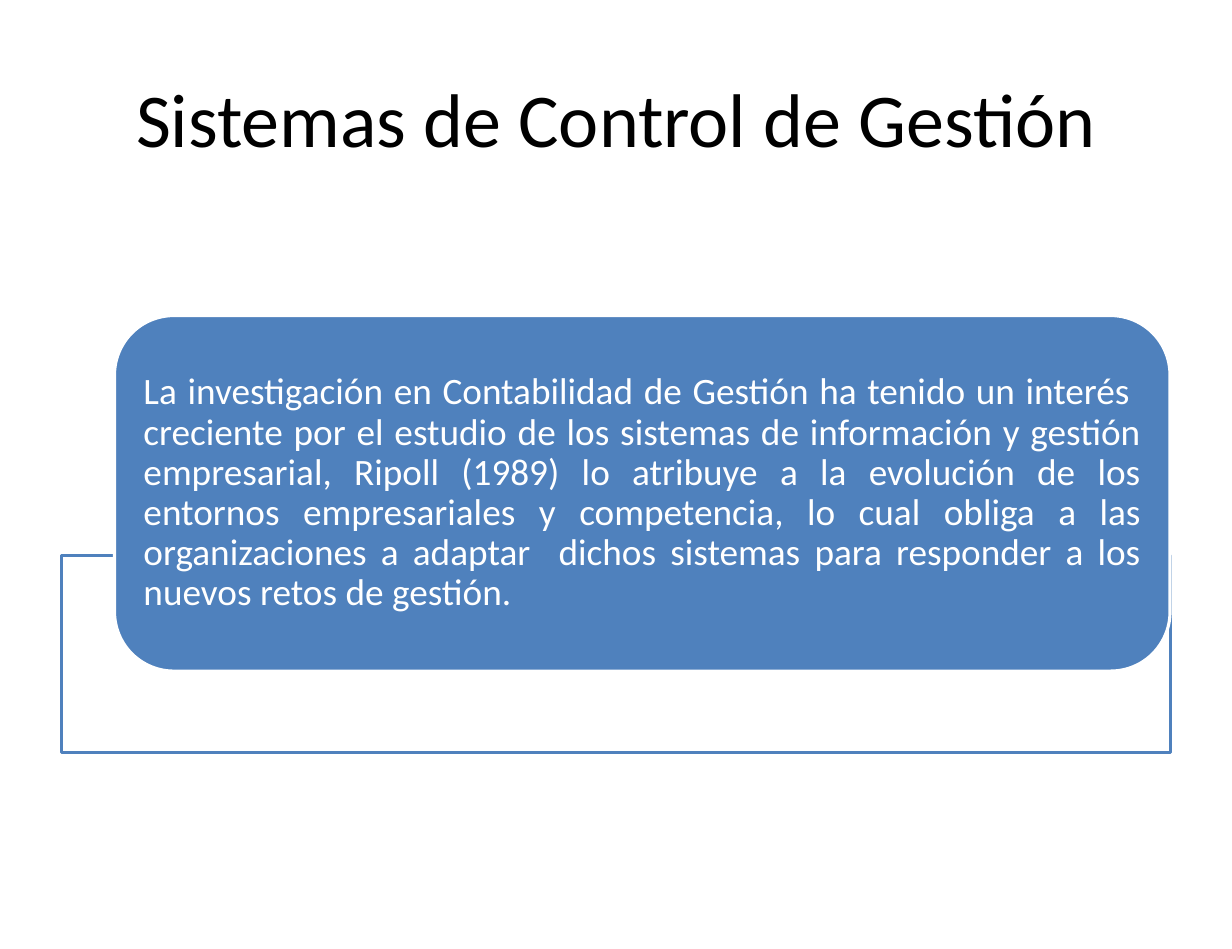
from pptx import Presentation
from pptx.dml.color import RGBColor
from pptx.enum.shapes import MSO_SHAPE as SHAPE
from pptx.enum.text import MSO_ANCHOR as ANCHOR, PP_ALIGN as ALIGN
from pptx.oxml.ns import qn
from pptx.util import Pt
from lxml import etree

BLUE, WHITE, BLACK = "4F81BD", "FFFFFF", "000000"


def rgb(color):
    return RGBColor.from_string(color)


def write(sp, text, size, color, align, margin_x, margin_y):
    tf = sp.text_frame
    tf.word_wrap = True
    tf.vertical_anchor = ANCHOR.MIDDLE
    tf.margin_left = tf.margin_right = Pt(margin_x)
    tf.margin_top = tf.margin_bottom = Pt(margin_y)
    p = tf.paragraphs[0]
    p.alignment = align
    r = p.add_run()
    r.text = text
    r.font.name, r.font.size = "Calibri", Pt(size)
    r.font.color.rgb = rgb(color)
    return p


prs = Presentation()
prs.slide_width, prs.slide_height = Pt(794.16), Pt(612)
s = prs.slides.add_slide(prs.slide_layouts[6])

# Title
title = s.shapes.add_textbox(Pt(39.6), Pt(24.5), Pt(714.5), Pt(102.2))
write(title, "Sistemas de Control de Gestión", 49, BLACK, ALIGN.CENTER, 8, 4)

# Outlined frame, then the rounded panel over it
panels = []
for kind, left, top, width, height, fill, line in (
    (SHAPE.RECTANGLE, 39.6, 358.5, 715, 126.7, WHITE, BLUE),
    (SHAPE.ROUNDED_RECTANGLE, 73.8, 203.5, 680.4, 229.3, BLUE, WHITE),
):
    sp = s.shapes.add_shape(kind, Pt(left), Pt(top), Pt(width), Pt(height))
    sp.shadow.inherit = False
    sp.fill.solid()
    sp.fill.fore_color.rgb = rgb(fill)
    sp.line.color.rgb = rgb(line)
    sp.line.width = Pt(2)
    panels.append(sp)
frame, panel = panels

# Frame fill is 90 % opaque
fill_color = frame.element.spPr.find(qn("a:solidFill"))[0]
etree.SubElement(fill_color, qn("a:alpha")).set("val", "90000")

# Panel text
p = write(
    panel,
    "La investigación en Contabilidad de Gestión ha tenido un interés  creciente "
    "por el estudio de los sistemas de información y gestión empresarial, "
    "Ripoll (1989) lo atribuye a la evolución de los entornos empresariales y "
    "competencia, lo cual obliga a las organizaciones a adaptar  dichos sistemas "
    "para responder a los nuevos retos de gestión. ",
    24, WHITE, ALIGN.JUSTIFY, 7.5, 0,
)
p.line_spacing = 0.9

prs.save("out.pptx")
